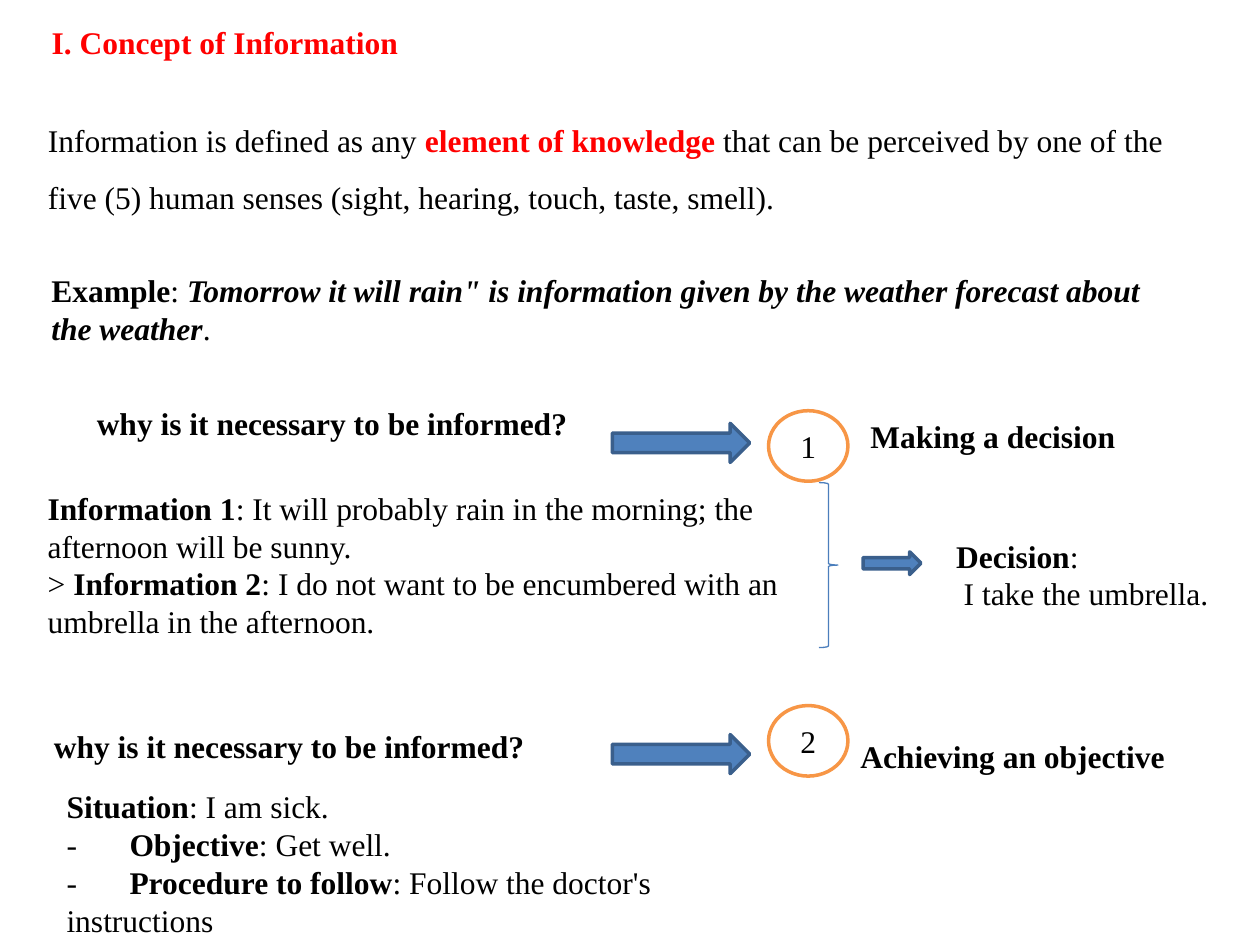
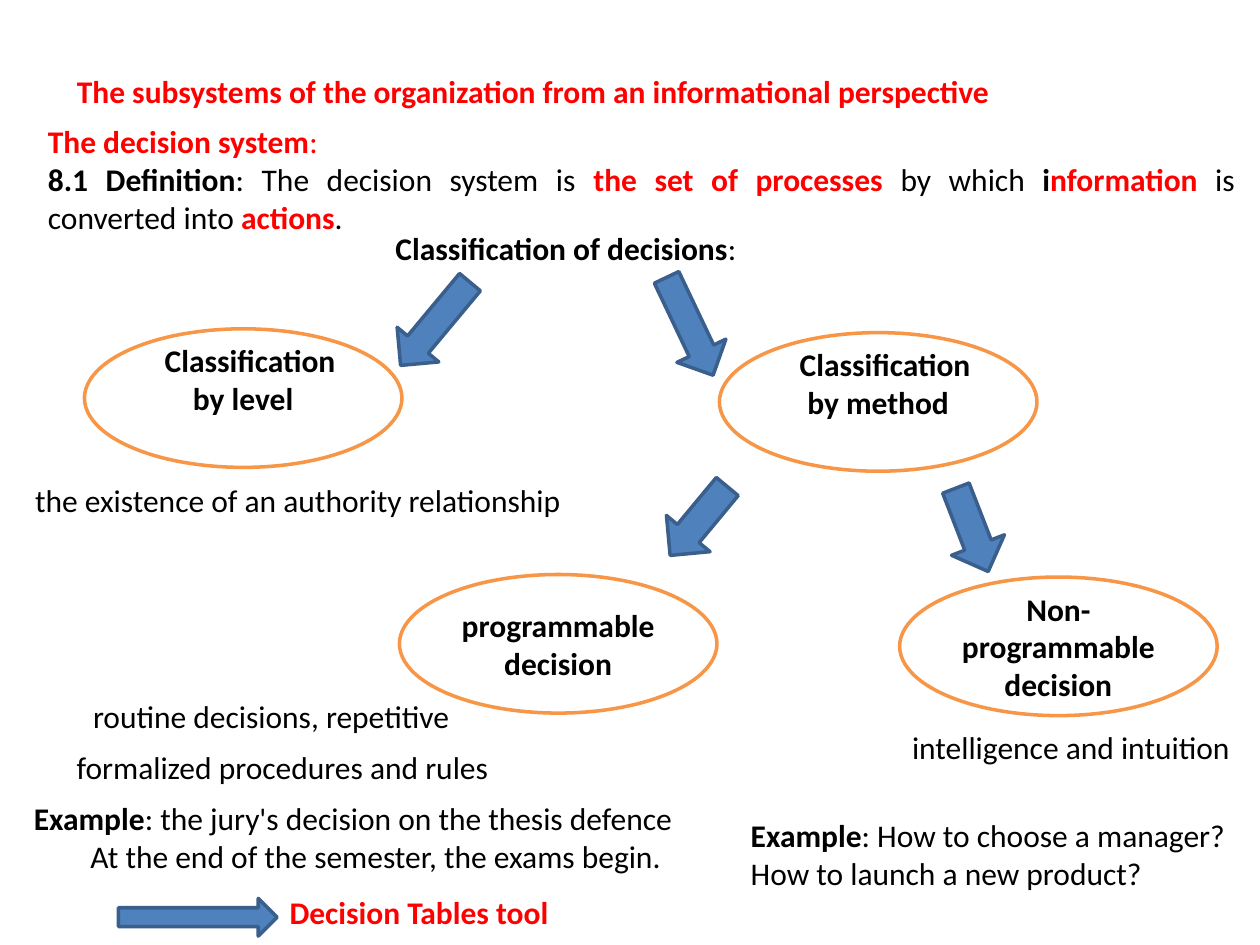
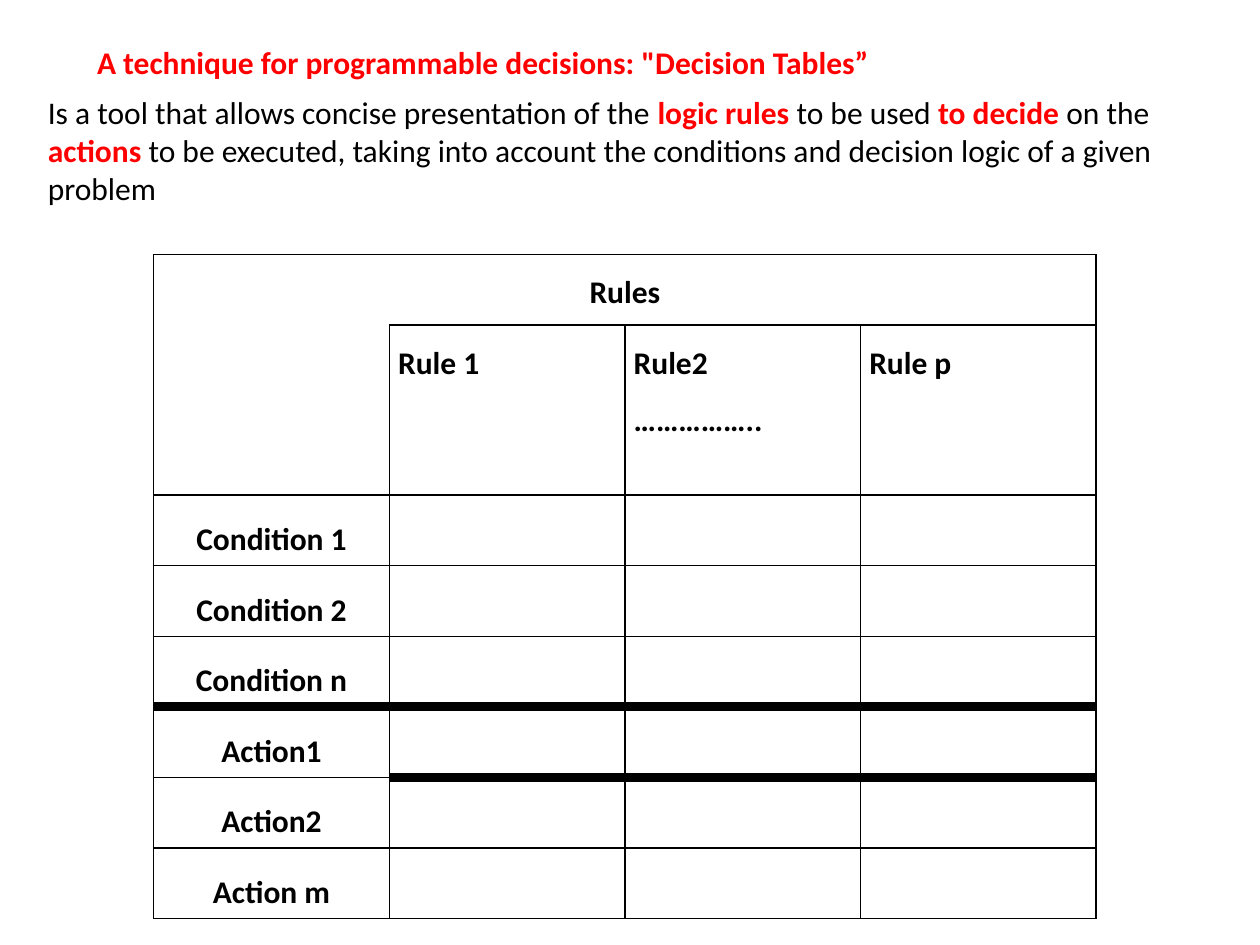
"""Build three slides on information, decisions and decision tables."""
from functools import partial
from typing import NamedTuple

from lxml import etree
from pptx import Presentation
from pptx.dml.color import RGBColor
from pptx.enum.shapes import MSO_SHAPE
from pptx.enum.text import MSO_ANCHOR, MSO_AUTO_SIZE, PP_ALIGN
from pptx.oxml.ns import qn
from pptx.util import Inches, Pt

BLACK = RGBColor(0x00, 0x00, 0x00)
WHITE = RGBColor(0xFF, 0xFF, 0xFF)
RED = RGBColor(0xFF, 0x00, 0x00)
BLUE = RGBColor(0x4F, 0x81, 0xBD)
DARK_BLUE = RGBColor(0x3A, 0x5F, 0x8C)
BRACE_BLUE = RGBColor(0x4B, 0x7E, 0xBC)
ORANGE = RGBColor(0xF7, 0x96, 0x46)

SERIF = "Times New Roman"
SANS = "Calibri"
TEXT_SIZE = Pt(18)
LINE_HEIGHT = 0.4

LEFT, CENTER, JUSTIFY = PP_ALIGN.LEFT, PP_ALIGN.CENTER, PP_ALIGN.JUSTIFY
TOP, MIDDLE = MSO_ANCHOR.TOP, MSO_ANCHOR.MIDDLE
NO_AUTO_SIZE = MSO_AUTO_SIZE.NONE
ELLIPSE, RIGHT_BRACE = MSO_SHAPE.OVAL, MSO_SHAPE.RIGHT_BRACE
RIGHT_ARROW, DOWN_ARROW = MSO_SHAPE.RIGHT_ARROW, MSO_SHAPE.DOWN_ARROW

TITLE_AND_CONTENT = 1
PLAIN_TABLE_STYLE = "{2D5ABB26-0587-4C30-8999-92F81FD0307C}"
THIN, THICK = Pt(1), Pt(6)


class Span(NamedTuple):
    """A stretch of text in one format."""

    text: str
    bold: bool = False
    italic: bool = False
    color: RGBColor = BLACK


class Para(NamedTuple):
    """A paragraph of spans with its indents and tab stop in inches."""

    spans: list[Span]
    left: float = 0
    first_line: float = 0
    tab: float = 0


class Area(NamedTuple):
    """A place on the slide in inches."""

    left: float
    top: float
    width: float
    height: float = LINE_HEIGHT


class Label(NamedTuple):
    """A free text and its place."""

    area: Area
    paras: list[Para]
    wrap: bool = False


class Arrow(NamedTuple):
    """A block arrow with its turn in degrees."""

    area: Area
    kind: MSO_SHAPE = RIGHT_ARROW
    turn: float = 0


class Bubble(NamedTuple):
    """An outlined ellipse with centred text, raised by some inches."""

    area: Area
    para: Para
    lift: float = 0


bold = partial(Span, bold=True)
key = partial(Span, bold=True, color=RED)


def line(*spans: Span, **indents: float) -> Para:
    """Make a paragraph from spans."""
    return Para(list(spans), **indents)


def place(area: Area) -> tuple:
    """Turn an area into lengths."""
    return tuple(Inches(value) for value in area)


def write(frame, paras: list[Para], *, font: str = SANS, align=LEFT,
          spacing: float = 1.0) -> None:
    """Fill a text frame with formatted paragraphs."""
    for index, para in enumerate(paras):
        target = frame.add_paragraph() if index else frame.paragraphs[0]
        target.alignment = align
        target.line_spacing = spacing
        target.space_before = Pt(0)
        properties = target._p.get_or_add_pPr()
        properties.set("marL", str(Inches(para.left)))
        properties.set("indent", str(Inches(para.first_line)))
        etree.SubElement(properties, qn("a:buNone"))
        if para.tab:
            tabs = etree.SubElement(properties, qn("a:tabLst"))
            etree.SubElement(tabs, qn("a:tab"), pos=str(Inches(para.tab)), algn="l")
        for span in para.spans:
            run = target.add_run()
            run.text = span.text
            run.font.name = font
            run.font.size = TEXT_SIZE
            run.font.bold = span.bold
            run.font.italic = span.italic
            run.font.color.rgb = span.color


def fill_placeholder(box, area: Area, paras: list[Para], *, wrap: bool = True, **style) -> None:
    """Move a placeholder and write its text."""
    box.left, box.top, box.width, box.height = place(area)
    frame = box.text_frame
    frame.word_wrap = wrap
    frame.auto_size = NO_AUTO_SIZE
    frame.vertical_anchor = TOP
    write(frame, paras, **style)


def add_page(deck, title: str, title_area: Area, body: list[Para], body_area: Area, *,
             font: str = SANS, wrap_title: bool = True, **body_style):
    """Add a slide with its red title and its opening text."""
    page = deck.slides.add_slide(deck.slide_layouts[TITLE_AND_CONTENT])
    fill_placeholder(page.shapes.title, title_area, [line(key(title))],
                     wrap=wrap_title, font=font)
    fill_placeholder(page.placeholders[1], body_area, body, font=font, **body_style)
    return page


def add_label(page, label: Label, font: str) -> None:
    """Draw a free text."""
    box = page.shapes.add_textbox(*place(label.area))
    box.text_frame.word_wrap = label.wrap
    write(box.text_frame, label.paras, font=font)


def add_figure(page, kind: MSO_SHAPE, area: Area, *, outline: RGBColor,
               fill: RGBColor | None = None, weight: float = 2):
    """Draw a preset shape without shadow."""
    figure = page.shapes.add_shape(kind, *place(area))
    figure.shadow.inherit = False
    if fill is None:
        figure.fill.background()
    else:
        figure.fill.solid()
        figure.fill.fore_color.rgb = fill
    figure.line.color.rgb = outline
    figure.line.width = Pt(weight)
    return figure


def add_arrow(page, arrow: Arrow) -> None:
    """Draw a blue block arrow."""
    figure = add_figure(page, arrow.kind, arrow.area, outline=DARK_BLUE, fill=BLUE)
    figure.rotation = arrow.turn


def add_bubble(page, bubble: Bubble, font: str) -> None:
    """Draw an orange ellipse with its text."""
    figure = add_figure(page, ELLIPSE, bubble.area, outline=ORANGE, fill=WHITE)
    frame = figure.text_frame
    frame.word_wrap = True
    frame.vertical_anchor = MIDDLE
    frame.margin_bottom = Inches(0.05 + bubble.lift)
    write(frame, [bubble.para], font=font, align=CENTER)


def draw(page, font: str, labels: list[Label], arrows: list[Arrow],
         bubbles: list[Bubble]) -> None:
    """Draw the bubbles, arrows and labels of a slide."""
    for bubble in bubbles:
        add_bubble(page, bubble, font)
    for arrow in arrows:
        add_arrow(page, arrow)
    for label in labels:
        add_label(page, label, font)


def set_borders(cell, **widths: int) -> None:
    """Give a cell black borders on the named sides."""
    properties = cell._tc.get_or_add_tcPr()
    for side in "LRTB":
        if side in widths:
            border = etree.SubElement(properties, qn(f"a:ln{side}"), w=str(widths[side]))
            fill = etree.SubElement(border, qn("a:solidFill"))
            etree.SubElement(fill, qn("a:srgbClr"), val=str(BLACK))


def cell_borders(row: int, column: int) -> dict[str, int]:
    """Work out the borders of a cell in the decision table."""
    widths = {"L": THIN, "R": THIN, "T": THIN, "B": THIN}
    if row == 0:
        del widths["B"]
    if row == 1 and column == 0:
        del widths["T"]
    thick_below = (4,) if column == 0 else (4, 5)
    if row in thick_below:
        widths["B"] = THICK
    if row - 1 in thick_below:
        widths["T"] = THICK
    return widths


def add_decision_table(page) -> None:
    """Draw the table of rules, conditions and actions."""
    rules = [["Rule 1"], ["Rule2", "…………….."], ["Rule p"]]
    names = ["Condition 1", "Condition 2", "Condition n", "Action1", "Action2", "Action m"]
    heights = [0.56, 1.35] + [0.56] * len(names)
    frame = page.shapes.add_table(len(heights), 4, *place(Area(1.22, 2.02, 7.48, sum(heights))))
    table = frame.table
    table.first_row = table.horz_banding = False
    table._tbl.tblPr.find(qn("a:tableStyleId")).text = PLAIN_TABLE_STYLE
    for column in table.columns:
        column.width = Inches(1.87)
    for row, height in zip(table.rows, heights):
        row.height = Inches(height)

    texts = {(0, 0): ["Rules"]}
    texts |= {(1, column): text for column, text in enumerate(rules, 1)}
    texts |= {(row, 0): [name] for row, name in enumerate(names, 2)}
    for row in range(len(heights)):
        for column in range(4):
            cell = table.cell(row, column)
            set_borders(cell, **cell_borders(row, column))
            cell.fill.solid()
            cell.fill.fore_color.rgb = WHITE
            cell.margin_left = cell.margin_right = Inches(0.07)
            cell.margin_top = cell.margin_bottom = 0
            cell.vertical_anchor = MIDDLE if row > 1 else TOP
            if (row, column) in texts:
                write(cell.text_frame, [line(bold(text)) for text in texts[row, column]],
                      align=JUSTIFY if row == 1 else CENTER, spacing=1.5)
    table.cell(0, 0).merge(table.cell(0, 3))


def build_information(deck) -> None:
    """Build the slide on the concept of information."""
    definition = line(
        Span("Information is defined as any "), key("element of knowledge "),
        Span("that can be perceived by one of the five (5) human senses "
             "(sight, hearing, touch, taste, smell)."))
    page = add_page(deck, "I. Concept of Information", Area(0.31, 0.13, 2.98),
                    [definition], Area(0.28, 0.76, 9.37, 1.01),
                    font=SERIF, wrap_title=False, spacing=1.5)
    question = [line(bold("why is it necessary to be informed?"))]
    labels = [
        Label(Area(0.31, 2.1, 9.1, 0.71), [line(
            bold("Example"), Span(": "),
            bold('Tomorrow it will rain" is information given by the weather '
                 "forecast about the weather", italic=True), Span("."))], wrap=True),
        Label(Area(0.67, 3.16, 3.97), question),
        Label(Area(0.33, 5.72, 3.97), question),
        Label(Area(6.81, 3.26, 2.17), [line(bold("Making a decision"))]),
        Label(Area(6.73, 5.8, 2.64), [line(bold("Achieving an objective"))]),
        Label(Area(0.28, 3.83, 6.22, 1.31), [
            line(bold("Information 1"), Span(": It will probably rain in the morning; "
                                             "the afternoon will be sunny.")),
            line(Span("> "), bold("Information 2"),
                 Span(": I do not want to be encumbered with an umbrella "
                      "in the afternoon."))], wrap=True),
        Label(Area(7.49, 4.21, 2.51, 0.71), [
            line(bold("Decision"), Span(":")),
            line(Span("I take the umbrella."), left=0.06)], wrap=True),
        Label(Area(0.43, 6.2, 5.83, 1.31), [
            line(bold("Situation"), Span(": I am sick.")),
            line(Span("-\t"), bold("Objective"), Span(": Get well."), tab=0.27),
            line(Span("-\t"), bold("Procedure to follow"),
                 Span(": Follow the doctor's instructions"), tab=0.27)], wrap=True),
    ]
    arrows = [Arrow(Area(4.86, 3.36, 1.09, 0.31)), Arrow(Area(4.86, 5.83, 1.09, 0.31)),
              Arrow(Area(6.85, 4.38, 0.46, 0.18))]
    bubbles = [Bubble(Area(6.1, top, 0.63, 0.56), line(Span(number)))
               for number, top in (("1", 3.26), ("2", 5.6))]
    add_figure(page, RIGHT_BRACE, Area(6.5, 3.83, 0.15, 1.31), outline=BRACE_BLUE, weight=0.75)
    draw(page, SERIF, labels, arrows, bubbles)


def build_decision_system(deck) -> None:
    """Build the slide on the decision system and its classes."""
    body = [
        line(key("The decision system"), Span(":", color=RED)),
        line(bold("8.1 Definition"), Span(": The decision system is "),
             key("the set of processes "), Span("by which "), bold("i"), key("nformation"),
             Span(" is converted into "), key("actions"), Span(".")),
    ]
    page = add_page(
        deck, "The subsystems of the organization from an informational perspective",
        Area(0.51, 0.52, 7.87), body, Area(0.28, 0.92, 9.62, 1.01), align=JUSTIFY)
    labels = [
        Label(Area(3.04, 1.77, 3.19),
              [line(bold("Classification of decisions"), Span(":"))], wrap=True),
        Label(Area(0.18, 3.77, 4.42), [line(Span("the existence of an authority relationship"))]),
        Label(Area(7.14, 5.73, 2.76), [line(Span("intelligence and intuition"))]),
        Label(Area(5.86, 6.43, 4.14, 0.71), [line(
            bold("Example"),
            Span(": How to choose a manager? How to launch a new product?"))], wrap=True),
        Label(Area(0.64, 5.48, 3.07), [line(Span("routine decisions, repetitive"))]),
        Label(Area(0.51, 5.89, 3.51), [line(Span("formalized procedures and rules"))]),
        Label(Area(0.17, 6.29, 5.33, 0.71), [
            line(bold("Example"), Span(": the jury's decision on the thesis defence")),
            line(Span("At the end of the semester, the exams begin."), left=0.45)]),
        Label(Area(2.2, 7.04, 2.27), [line(key("Decision Tables tool"))]),
    ]
    arrows = [
        Arrow(Area(3.24, 2.14, 0.43, 0.86), DOWN_ARROW, 39.8),
        Arrow(Area(5.26, 2.16, 0.43, 0.86), DOWN_ARROW, 334.6),
        Arrow(Area(5.32, 3.78, 0.45, 0.71), DOWN_ARROW, 39.7),
        Arrow(Area(7.49, 3.85, 0.45, 0.71), DOWN_ARROW, 338.8),
        Arrow(Area(0.94, 7.13, 1.26, 0.3)),
    ]
    classes = [
        (0.67, 2.61, "Classification by level", 0.11, 0.3),
        (5.71, 2.64, "Classification by method", 0.11, 0.3),
        (3.17, 4.56, "programmable decision", 0, 0),
        (7.14, 4.58, "Non-programmable decision", 0, 0),
    ]
    bubbles = [Bubble(Area(left, top, 2.52, 1.1), line(bold(name), first_line=indent), lift)
               for left, top, name, indent, lift in classes]
    draw(page, SANS, labels, arrows, bubbles)


def build_decision_tables(deck) -> None:
    """Build the slide on decision tables."""
    purpose = line(
        Span("Is a tool that allows concise presentation of the "), key("logic rules "),
        Span("to be used "), key("to decide "), Span("on the "), key("actions"),
        Span(" to be executed, taking into account the conditions and decision logic "
             "of a given problem"))
    page = add_page(deck, 'A technique for programmable decisions: "Decision Tables”',
                    Area(0.67, 0.29, 8.27), [purpose], Area(0.28, 0.69, 9.37, 1.01))
    add_decision_table(page)


def main() -> None:
    """Build and save the deck."""
    deck = Presentation()
    deck.slide_width, deck.slide_height = Inches(10), Inches(7.5)
    build_information(deck)
    build_decision_system(deck)
    build_decision_tables(deck)
    deck.save("out.pptx")


if __name__ == "__main__":
    main()
